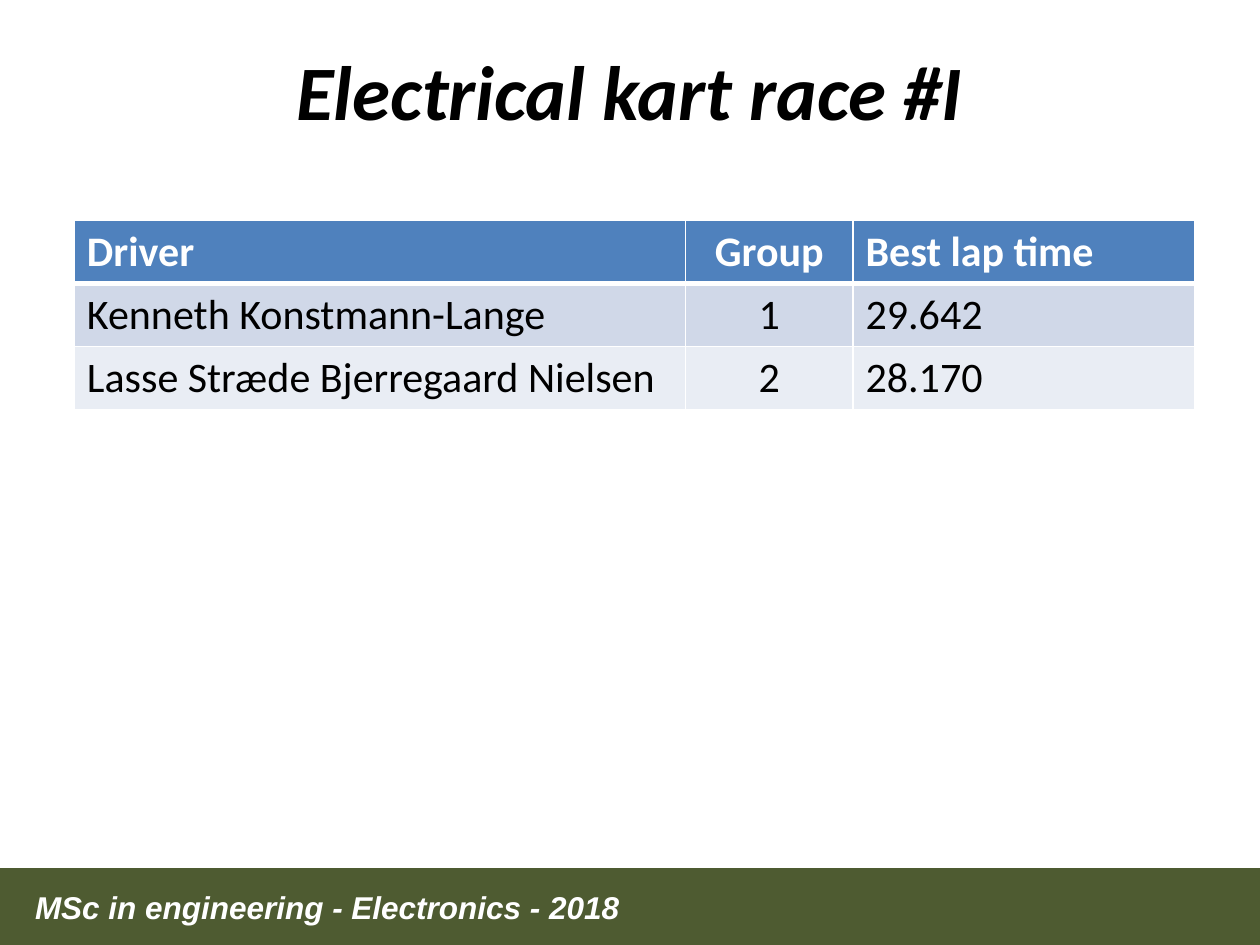
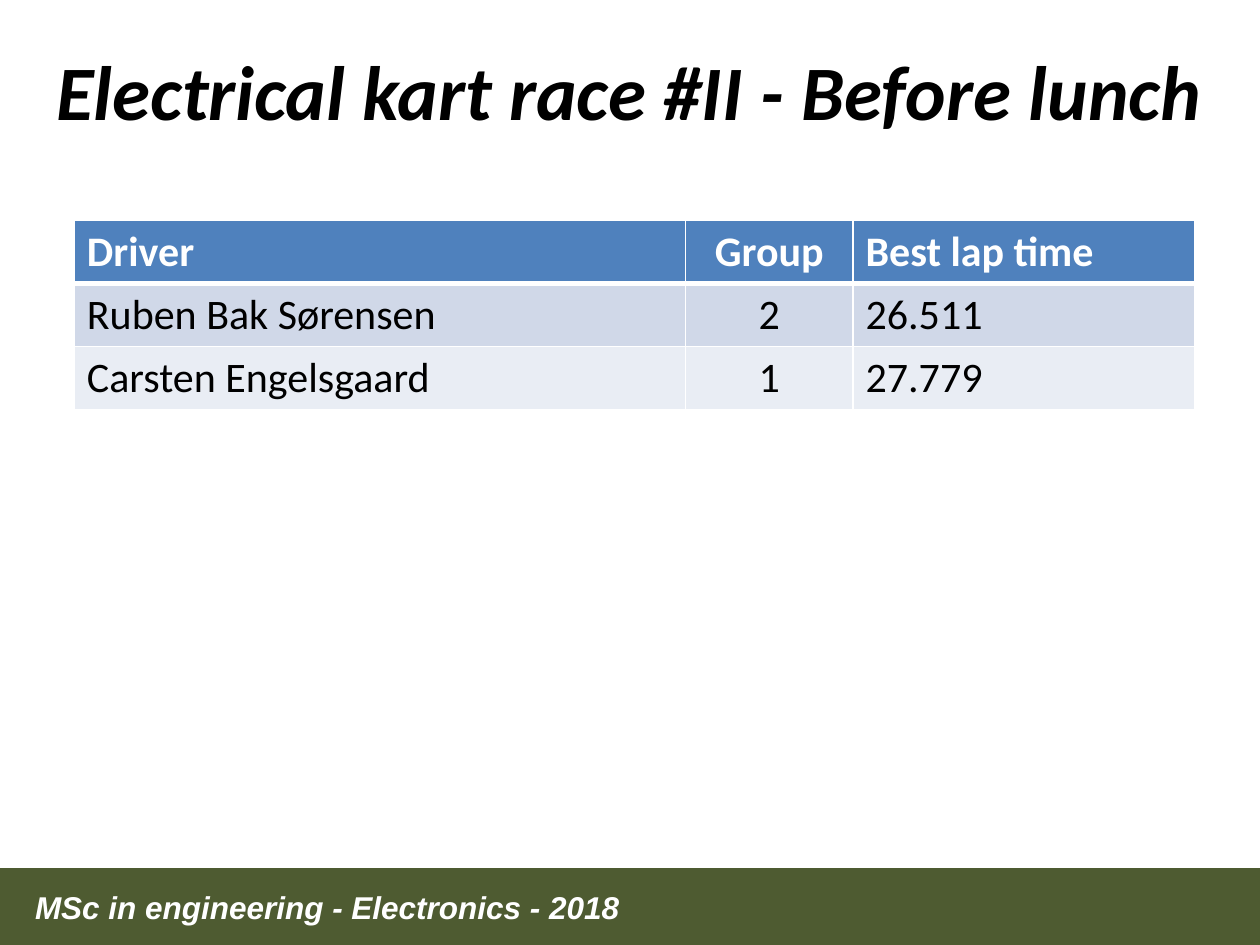
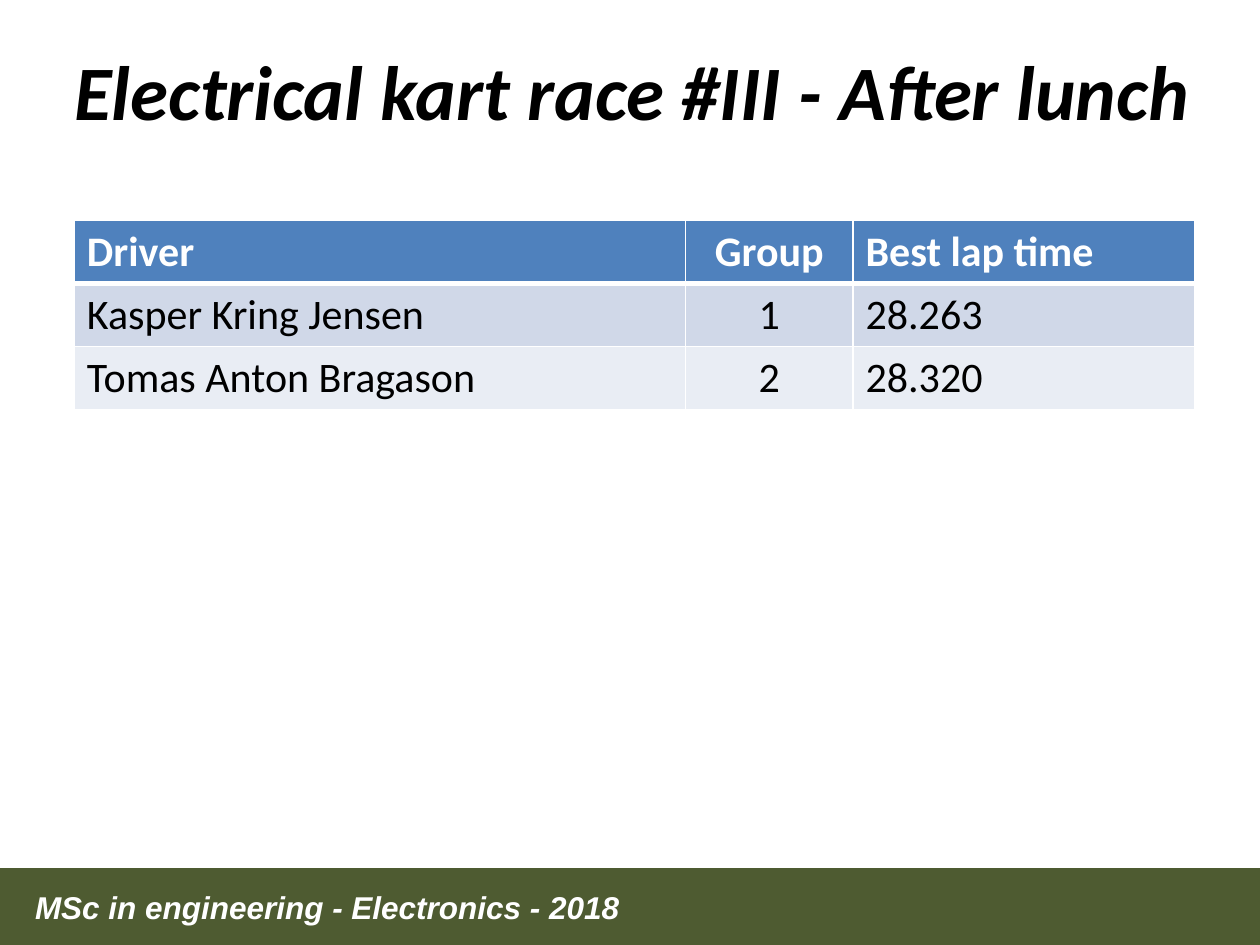
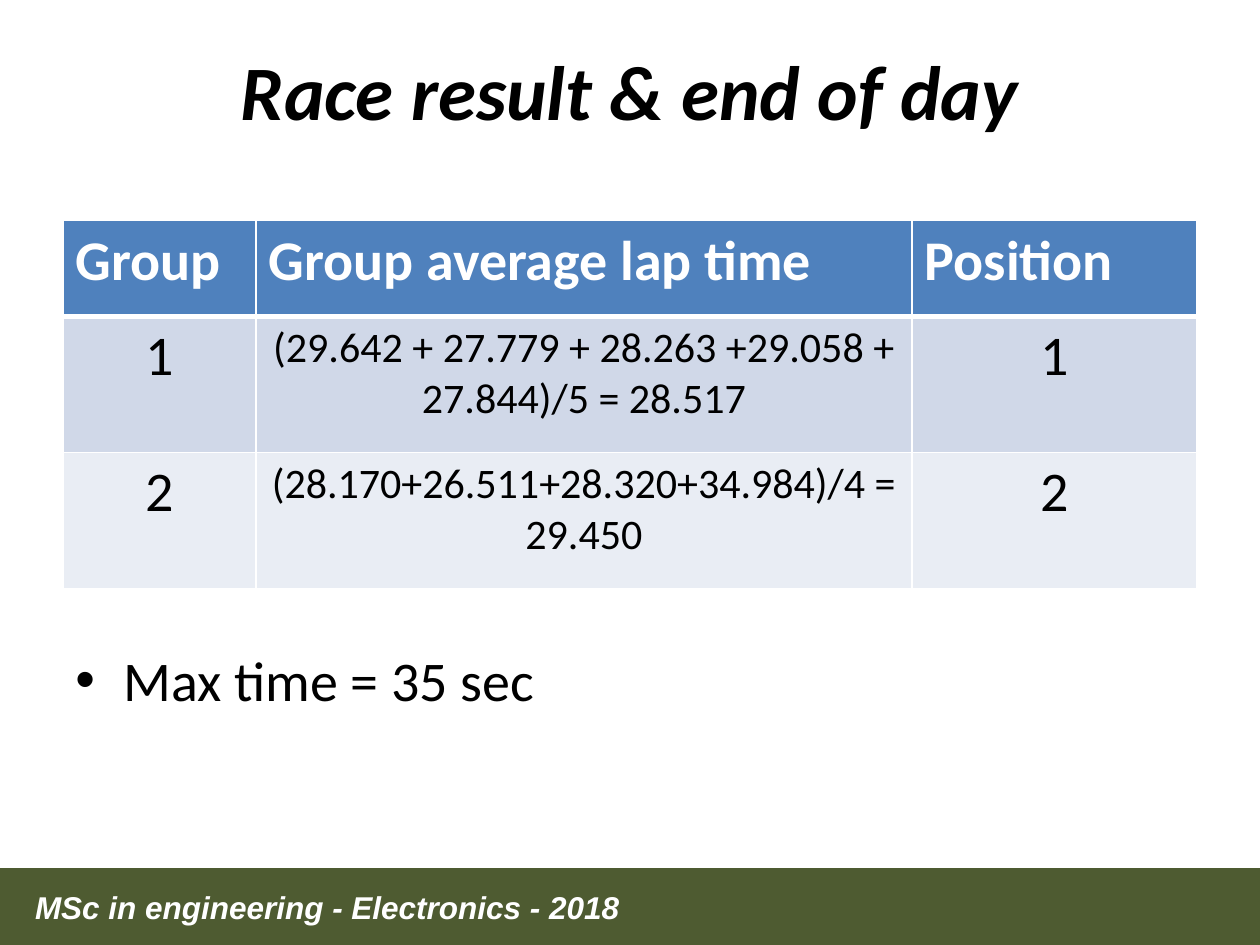
from lxml import etree
from pptx import Presentation
from pptx.dml.color import RGBColor
from pptx.enum.shapes import MSO_SHAPE
from pptx.enum.text import PP_ALIGN
from pptx.oxml.ns import qn
from pptx.util import Inches, Pt

RECT = MSO_SHAPE.RECTANGLE
LEFT, MID = PP_ALIGN.LEFT, PP_ALIGN.CENTER
WHITE, BLACK, GREEN = "FFFFFF", "000000", "4E5B31"
FILLS = ["4F81BD", "D0D8E8", "E9EDF4"]
HEAD = ["Driver", "Group", "Best lap time"]
RACE = dict(left=0.59, cols=[4.85, 1.33, 2.71], rows=[0.5] * 3,
            sizes=[24] * 3, top=[LEFT, MID, LEFT], rest=[LEFT, MID, LEFT])
FINAL = dict(left=0.5, cols=[1.53, 5.21, 2.26], rows=[0.76, 1.08, 1.08],
             sizes=[32, 24, 32], top=[LEFT] * 3, rest=[MID] * 3)

PAGES = [
    ("Electrical kart race #I", 0.5, 9, RACE, [
        HEAD,
        ["Kenneth Konstmann-Lange", "1", "29.642"],
        ["Lasse Stræde Bjerregaard Nielsen", "2", "28.170"]], None),
    ("Electrical kart race #II - Before lunch ", 0.32, 9.49, RACE, [
        HEAD,
        ["Ruben Bak Sørensen", "2", "26.511"],
        ["Carsten Engelsgaard", "1", "27.779"]], None),
    ("Electrical kart race #III - After lunch", 0.29, 9.46, RACE, [
        HEAD,
        ["Kasper Kring Jensen", "1", "28.263"],
        ["Tomas Anton Bragason", "2", "28.320"]], None),
    ("Race result & end of day", 0.5, 9, FINAL, [
        ["Group", "Group average lap time", "Position"],
        ["1", "(29.642 + 27.779 + 28.263 +29.058 + 27.844)/5 = 28.517", "1"],
        ["2", "(28.170+26.511+28.320+34.984)/4 = 29.450", "2"]],
     "Max time = 35 sec"),
]


def paint(color, tone):
    color.rgb = RGBColor.from_string(tone)


def write(frame, text, size, tone, bold=False, slant=False, align=LEFT, face="Calibri"):
    frame.word_wrap = True
    para = frame.paragraphs[0]
    para.alignment = align
    run = para.add_run()
    run.text = text
    font = run.font
    font.name, font.size = face, Pt(size)
    font.bold, font.italic = bold, slant
    paint(font.color, tone)
    return para


deck = Presentation()
deck.slide_width, deck.slide_height = Inches(10), Inches(7.5)

for title, left, width, plan, data, note in PAGES:
    slide = deck.slides.add_slide(deck.slide_layouts[6])
    shapes = slide.shapes

    band = shapes.add_shape(RECT, 0, Inches(6.89), Inches(10), Inches(0.61))
    band.shadow.inherit = False
    band.fill.solid()
    paint(band.fill.fore_color, GREEN)
    band.line.fill.background()

    foot = shapes.add_textbox(Inches(0.18), Inches(7), Inches(6.36), Inches(0.4))
    write(foot.text_frame, "MSc in engineering - Electronics - 2018", 18, WHITE,
          True, True, face="Arial")

    box = shapes.add_textbox(Inches(left), Inches(0.3), Inches(width), Inches(1.25))
    write(box.text_frame, title, 44, BLACK, True, True, MID)

    if note:
        box = shapes.add_textbox(Inches(0.5), Inches(5.07), Inches(9), Inches(0.88))
        props = write(box.text_frame, note, 32, BLACK)._p.get_or_add_pPr()
        props.set("marL", str(Inches(0.38)))
        props.set("indent", str(-Inches(0.38)))
        etree.SubElement(props, qn("a:buFont"), typeface="Arial")
        etree.SubElement(props, qn("a:buChar"), char="•")

    grid = shapes.add_table(
        len(data), len(HEAD), Inches(plan["left"]), Inches(1.75),
        Inches(sum(plan["cols"])), Inches(sum(plan["rows"]))).table
    for col, span in zip(grid.columns, plan["cols"]):
        col.width = Inches(span)
    for row, tall in zip(grid.rows, plan["rows"]):
        row.height = Inches(tall)

    for r, row in enumerate(data):
        head = r == 0
        for c, text in enumerate(row):
            cell = grid.cell(r, c)
            size = plan["sizes"][0] if head else plan["sizes"][c]
            align = plan["top" if head else "rest"][c]
            write(cell.text_frame, text, size, WHITE if head else BLACK, head, align=align)
            props = cell._tc.get_or_add_tcPr()
            for side in "LRTB":
                thick = (side == "B" and r == 0) or (side == "T" and r == 1)
                line = etree.SubElement(props, qn("a:ln" + side), w=str(Pt(3 if thick else 1)))
                fill = etree.SubElement(line, qn("a:solidFill"))
                etree.SubElement(fill, qn("a:srgbClr"), val=WHITE)
            cell.fill.solid()
            paint(cell.fill.fore_color, FILLS[r])

deck.save("out.pptx")
